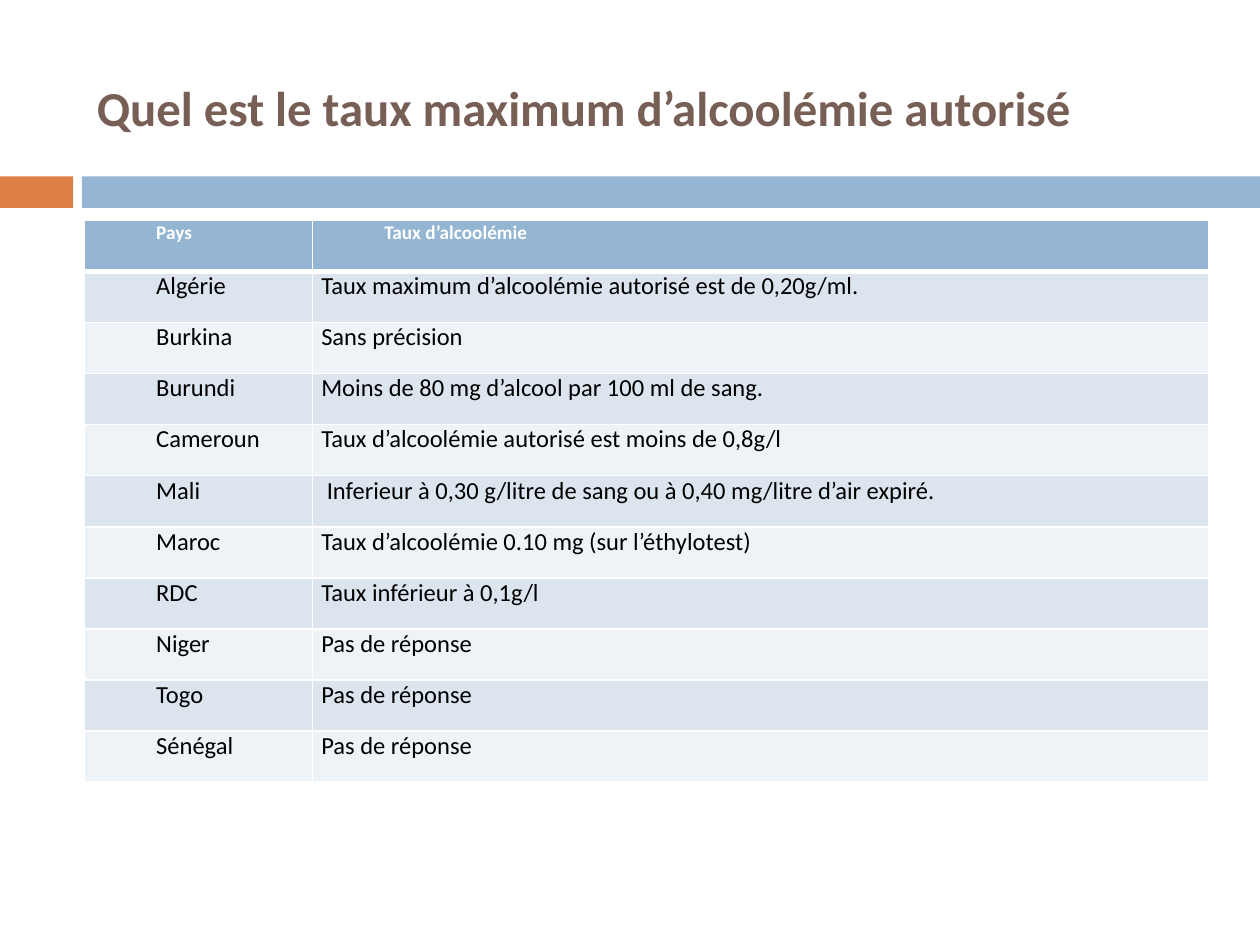
from lxml import etree
from pptx import Presentation
from pptx.dml.color import RGBColor
from pptx.enum import shapes, text
from pptx.oxml import ns
from pptx.util import Inches, Pt

BROWN = RGBColor(0x77, 0x5F, 0x55)
ORANGE = RGBColor(0xDD, 0x80, 0x47)
BLUE = RGBColor(0x94, 0xB6, 0xD2)
MID = RGBColor(0xDC, 0xE5, 0xEE)
PALE = RGBColor(0xEE, 0xF3, 0xF7)
WHITE = RGBColor(0xFF, 0xFF, 0xFF)
BLACK = RGBColor(0, 0, 0)

LEFT, WIDTH = 0.67, 8.92
COLS = (1.81, 7.11)
ROWS = [
    ("Pays", "Taux d’alcoolémie"),
    ("Algérie", "Taux maximum d’alcoolémie autorisé est de 0,20g/ml."),
    ("Burkina", "Sans précision"),
    ("Burundi", "Moins de 80 mg d’alcool par 100 ml de sang."),
    ("Cameroun", "Taux d’alcoolémie autorisé est moins de 0,8g/l"),
    ("Mali", " Inferieur à 0,30 g/litre de sang ou à 0,40 mg/litre d’air expiré."),
    ("Maroc", "Taux d’alcoolémie 0.10 mg (sur l’éthylotest)"),
    ("RDC", "Taux inférieur à 0,1g/l"),
    ("Niger", "Pas de réponse"),
    ("Togo", "Pas de réponse"),
    ("Sénégal", "Pas de réponse"),
]


def style(para, size, color, bold=False):
    for run in para.runs:
        font = run.font
        font.name, font.size, font.bold = "Calibri", Pt(size), bold
        font.color.rgb = color


def add_bar(slide, left, width, color):
    bar = slide.shapes.add_shape(shapes.MSO_SHAPE.RECTANGLE, Inches(left),
                                 Inches(1.4), Inches(width), Inches(0.25))
    bar.shadow.inherit = False
    bar.fill.solid()
    bar.fill.fore_color.rgb = color
    bar.line.fill.background()


def add_title(slide, words):
    box = slide.shapes.add_textbox(Inches(LEFT), Inches(0.25),
                                   Inches(WIDTH), Inches(1.08))
    frame = box.text_frame
    frame.word_wrap = True
    frame.vertical_anchor = text.MSO_ANCHOR.MIDDLE
    frame.margin_top = Inches(0.16)
    frame.text = words
    style(frame.paragraphs[0], 27.9, BROWN, True)


def set_edges(cell, top, bottom):
    """Draw white borders; top and bottom are widths in points."""
    props = cell._tc.get_or_add_tcPr()
    for side, width in zip("LRTB", (1, 1, top, bottom)):
        line = etree.SubElement(props, ns.qn("a:ln" + side), w=str(Pt(width)))
        fill = etree.SubElement(line, ns.qn("a:solidFill"))
        etree.SubElement(fill, ns.qn("a:srgbClr"), val=str(WHITE))


def fill_cell(cell, words, row, col):
    head = row == 0
    set_edges(cell, 3 if row == 1 else 1, 3 if head else 1)
    cell.fill.solid()
    cell.fill.fore_color.rgb = BLUE if head else MID if row % 2 else PALE
    cell.margin_left = cell.margin_right = Inches(0.07)
    cell.margin_top = cell.margin_bottom = 0
    cell.text_frame.text = words
    para = cell.text_frame.paragraphs[0]
    if head or col == 0:
        para._p.get_or_add_pPr().set("marL", str(Inches(0.5)))
    style(para, 11 if head else 14, WHITE if head else BLACK, head)


def add_rates(slide):
    high = Inches(4.46)
    table = slide.shapes.add_table(len(ROWS), len(COLS), Inches(LEFT),
                                   Inches(1.75), Inches(WIDTH), high).table
    for col, width in zip(table.columns, COLS):
        col.width = Inches(width)
    for r, line in enumerate(ROWS):
        table.rows[r].height = high // len(ROWS)
        for c, words in enumerate(line):
            fill_cell(table.cell(r, c), words, r, c)
    table.cell(3, 1).text_frame.paragraphs[0].alignment = text.PP_ALIGN.JUSTIFY


def main():
    deck = Presentation()
    deck.slide_width, deck.slide_height = Inches(10), Inches(7.5)
    slide = deck.slides.add_slide(deck.slide_layouts[6])
    add_bar(slide, 0, 0.58, ORANGE)
    add_bar(slide, 0.65, 9.35, BLUE)
    add_title(slide, "Quel est le taux maximum d’alcoolémie autorisé")
    add_rates(slide)
    deck.save("out.pptx")


if __name__ == "__main__":
    main()
